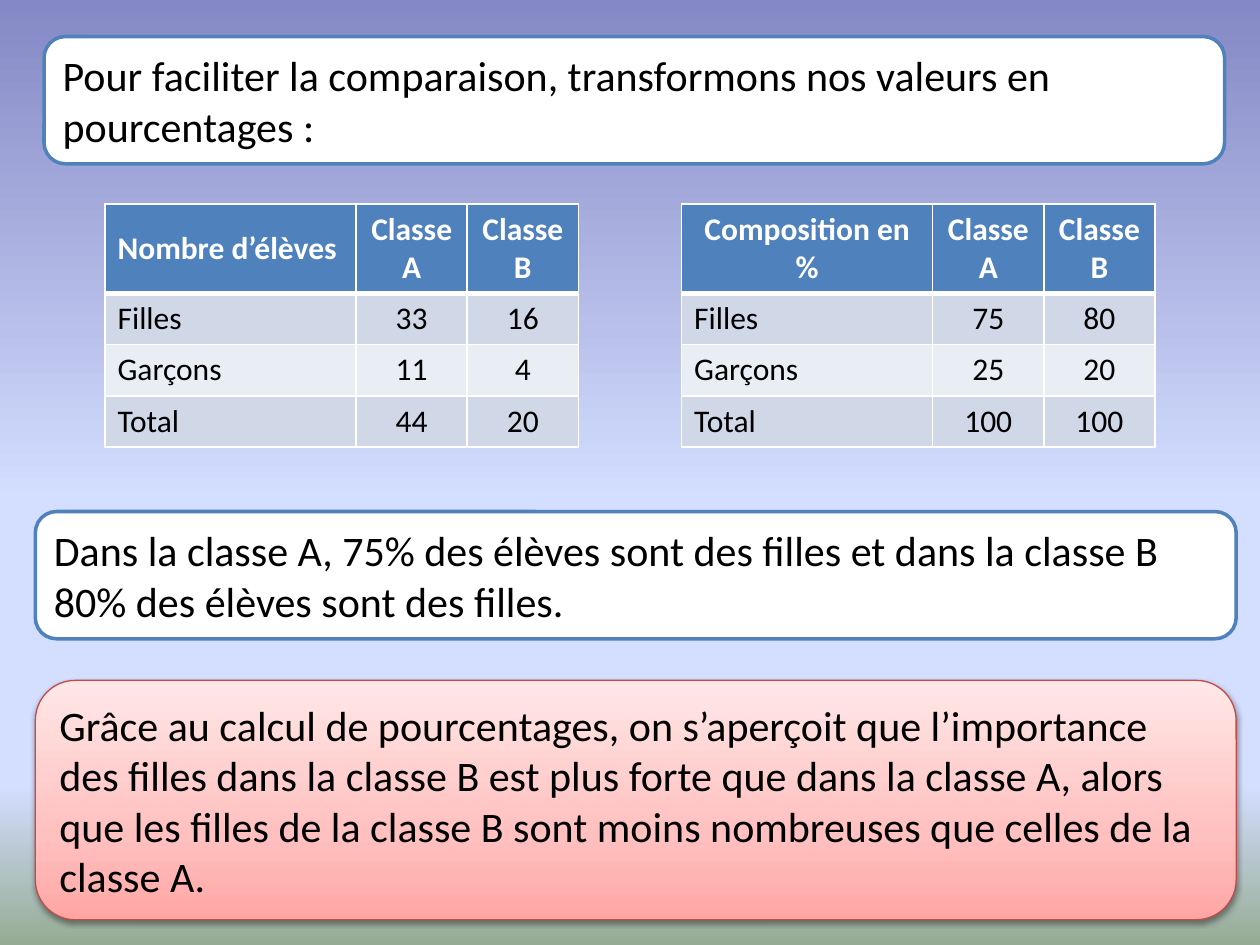
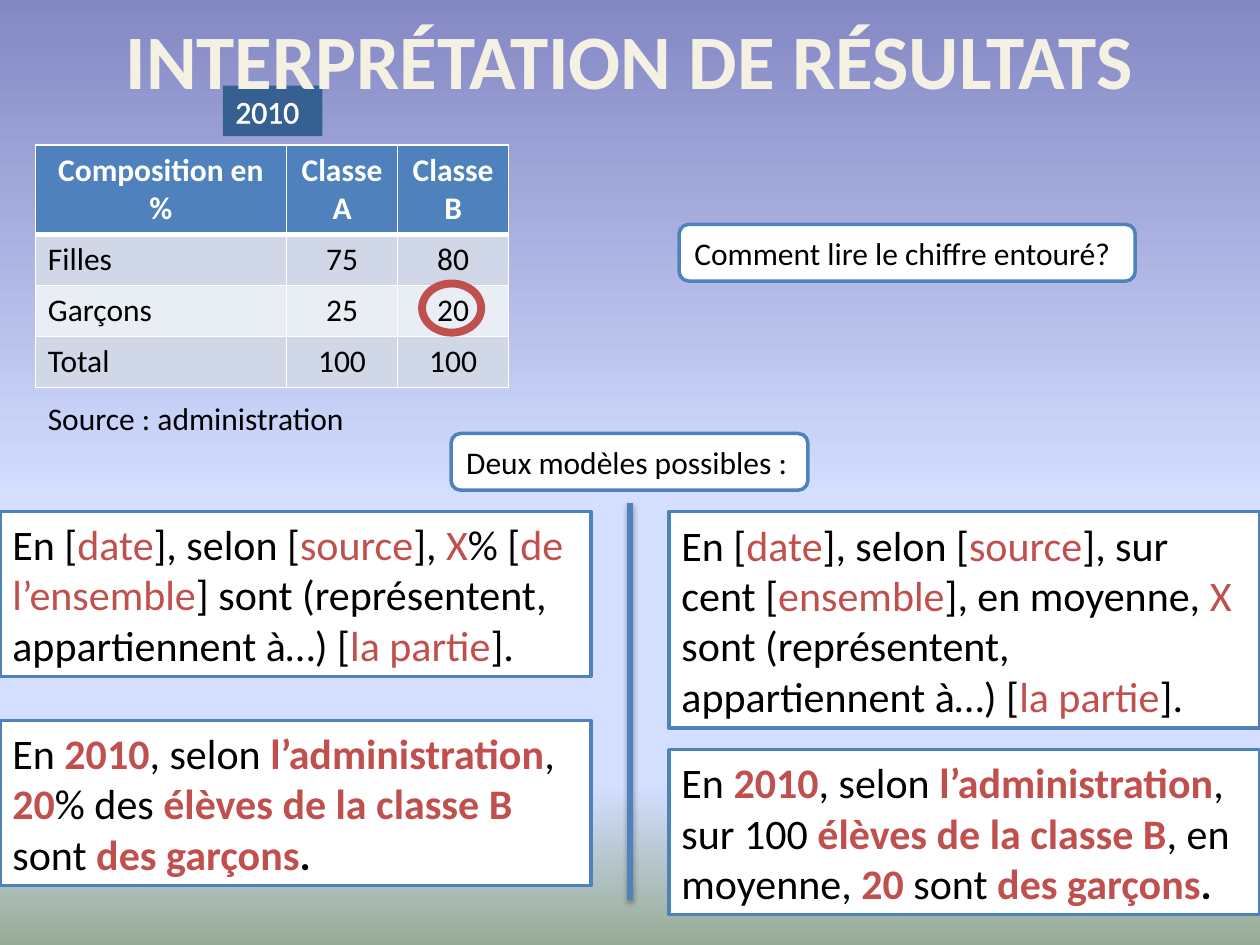
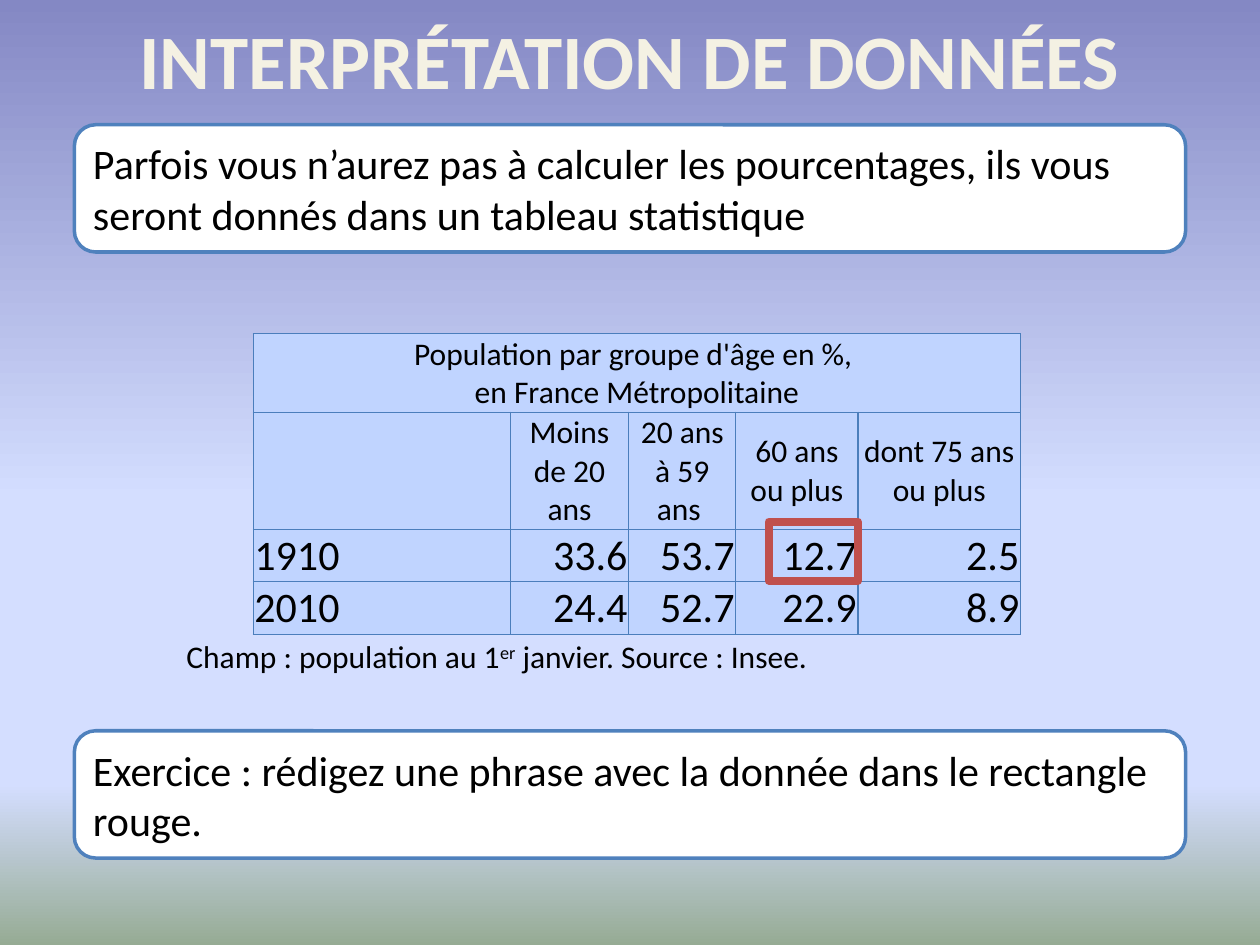
from dataclasses import dataclass

from lxml import etree
from pptx import Presentation
from pptx import util as u
from pptx.dml.color import RGBColor
from pptx.enum import shapes, text
from pptx.oxml.ns import qn


@dataclass(frozen=True)
class Theme:
    font: str = "Calibri"
    black: str = "000000"
    white: str = "FFFFFF"
    blue: str = "4F81BD"
    deep_blue: str = "376092"
    red: str = "C0504D"
    cream: str = "F4F1E3"
    title_edge: str = "054697"
    band_dark: str = "D0D8E8"
    band_light: str = "E9EDF4"
    age_fill: str = "C0D4FF"
    age_border: str = "4B7EBC"
    alert_edge: str = "BF4C48"
    sky: tuple = ((0, "8488C4"), (53, "D4DEFF"), (83, "D4DEFF"), (100, "96AB94"))
    alert: tuple = ((0, "FFA6A5"), (35, "FFC0BF"), (100, "FFE7E7"))
    title_size: int = 44
    body_size: int = 24
    small_size: int = 18


T = Theme()
ALIGN = {"l": text.PP_ALIGN.LEFT, "c": text.PP_ALIGN.CENTER, "r": text.PP_ALIGN.RIGHT}
ANCHOR = {"t": text.MSO_ANCHOR.TOP, "m": text.MSO_ANCHOR.MIDDLE, "b": text.MSO_ANCHOR.BOTTOM}

# ---- Content: *...* marks the accent colour, ^...^ a superscript ----
COUNTS = [("Nombre d’élèves", "Classe A", "Classe B"),
          ("Filles", "33", "16"), ("Garçons", "11", "4"), ("Total", "44", "20")]
PERCENTS = [("Composition en %", "Classe A", "Classe B"),
            ("Filles", "75", "80"), ("Garçons", "25", "20"), ("Total", "100", "100")]
AGE_HEADING = "Population par groupe d'âge en %, \nen France Métropolitaine"
AGES = [("", "Moins de 20 ans", "20 ans à 59 ans ", "60 ans ou plus", "dont 75 ans ou plus"),
        ("1910", "33.6", "53.7", "12.7", "2.5"),
        ("2010", "24.4", "52.7", "22.9", "8.9")]
COMPARISON = [
    ("Pour faciliter la comparaison, transformons nos valeurs en pourcentages :",
     (25.2, 20.9, 674.6, 72.7)),
    ("Dans la classe A, 75% des élèves sont des filles et dans la classe B "
     "80% des élèves sont des filles.", (20.2, 292.3, 686.2, 72.7)),
]
CONCLUSION = ("Grâce au calcul de pourcentages, on s’aperçoit que l’importance des filles "
              "dans la classe B est plus forte que dans la classe A, alors que les filles "
              "de la classe B sont moins nombreuses que celles de la classe A.")
PROMPTS = [("Comment lire le chiffre entouré?", (388.1, 128.2, 260.6, 32.4)),
           ("Deux modèles possibles :", (257.8, 247.7, 203.8, 32.4))]
# Text, column, top, height, bold accents
MODELS = [
    ("En [*date*], selon [*source*], *X*% [*de l’ensemble*] sont (représentent, "
     "appartiennent à…) [*la partie*].", 0, 292.3, 94.3, False),
    ("En [*date*], selon [*source*], sur cent [*ensemble*], en moyenne, *X* sont "
     "(représentent, appartiennent à…) [*la partie*].", 1, 292.3, 123.8, False),
    ("En *2010*, selon *l’administration*, *20*% des *élèves de la classe B* sont "
     "*des garçons*.", 0, 411.8, 94.3, True),
    ("En *2010*, selon *l’administration*, sur 100* élèves de la classe B*, en moyenne,"
     "* 20* sont *des garçons*.", 1, 428.4, 94.3, True),
]
EXERCISE = [
    ("Parfois vous n’aurez pas à calculer les pourcentages, ils vous seront donnés "
     "dans un tableau statistique", 71.3),
    ("Exercice : rédigez une phrase avec la donnée dans le rectangle rouge.", 417.6),
]


# ---- Helpers ----
def points(values):
    return [u.Pt(value) for value in values]


def add_xml(parent, tag, **attributes):
    child = etree.SubElement(parent, qn(tag))
    for key, value in attributes.items():
        child.set(key, str(value))
    return child


def solid(parent, color):
    return add_xml(add_xml(parent, "a:solidFill"), "a:srgbClr", val=color)


def set_gradient(fill, owner, stops, angle):
    fill.gradient()
    gradient = next(owner.iter(qn("a:gradFill")))
    for child in list(gradient):
        gradient.remove(child)
    stop_list = add_xml(gradient, "a:gsLst")
    for position, color in stops:
        stop = add_xml(stop_list, "a:gs", pos=position * 1000)
        add_xml(stop, "a:srgbClr", val=color)
    add_xml(gradient, "a:lin", ang=angle * 60000, scaled=0)


def set_shadow(part, alpha, blur, distance):
    properties = part._element.spPr
    for old in properties.findall(qn("a:effectLst")):
        properties.remove(old)
    effects = add_xml(properties, "a:effectLst")
    shadow = add_xml(effects, "a:outerShdw", blurRad=u.Pt(blur), dist=u.Pt(distance),
                     dir=90 * 60000, rotWithShape=0)
    add_xml(add_xml(shadow, "a:srgbClr", val=T.black), "a:alpha", val=alpha * 1000)


def write(frame, content, size=T.body_size, color=T.black, bold=False, bold_accents=False,
          align="l", outline=None):
    for index, line in enumerate(content.split("\n")):
        paragraph = frame.paragraphs[0] if index == 0 else frame.add_paragraph()
        paragraph.alignment = ALIGN[align]
        segments = line.split("*")
        for number, segment in enumerate(segments):
            accent = number % 2 == 1
            strong = bold_accents and (accent or number == len(segments) - 1)
            for level, piece in enumerate(segment.split("^")):
                if not piece:
                    continue
                run = paragraph.add_run()
                run.text = piece
                run.font.name, run.font.size = T.font, u.Pt(size)
                run.font.bold = bold or strong
                run.font.color.rgb = RGBColor.from_string(T.red if accent else color)
                properties = run._r.get_or_add_rPr()
                if level % 2:
                    properties.set("baseline", "30000")
                if outline:
                    edge = add_xml(properties, "a:ln", w=u.Pt(outline[1]))
                    solid(edge, outline[0])
                    properties.insert(0, edge)


def add_box(slide, place, content="", kind="ROUNDED_RECTANGLE", fill=T.white, line=T.blue,
            width=2, **style):
    box = slide.shapes.add_shape(shapes.MSO_SHAPE[kind], *points(place))
    box.shadow.inherit = False
    if fill:
        box.fill.solid()
        box.fill.fore_color.rgb = RGBColor.from_string(fill)
    else:
        box.fill.background()
    if line:
        box.line.color.rgb = RGBColor.from_string(line)
        box.line.width = u.Pt(width)
    else:
        box.line.fill.background()
    box.text_frame.word_wrap = True
    box.text_frame.vertical_anchor = ANCHOR["m"]
    write(box.text_frame, content, **style)
    return box


def add_label(slide, place, content, anchor="t", **style):
    frame = slide.shapes.add_textbox(*points(place)).text_frame
    frame.word_wrap = True
    frame.vertical_anchor = ANCHOR[anchor]
    write(frame, content, **style)


def add_title(slide, content):
    add_label(slide, (36, 0, 648, 67.7), content, anchor="m", size=T.title_size,
              color=T.cream, bold=True, align="c", outline=(T.title_edge, 1))


def style_cell(cell, content, fill, border, widths, anchor="t", **style):
    cell.fill.solid()
    cell.fill.fore_color.rgb = RGBColor.from_string(fill)
    cell.vertical_anchor = ANCHOR[anchor]
    write(cell.text_frame, content, **style)
    properties = cell._tc.get_or_add_tcPr()
    for index, (side, width) in enumerate(zip("LRTB", widths)):
        edge = add_xml(properties, f"a:ln{side}", w=u.Pt(width))
        solid(edge, border)
        properties.insert(index, edge)


def add_grid(slide, left, top, columns, rows):
    place = points((left, top, sum(columns), sum(rows)))
    grid = slide.shapes.add_table(len(rows), len(columns), *place).table
    grid.first_row = grid.horz_banding = False
    for column, width in zip(grid.columns, columns):
        column.width = u.Pt(width)
    for row, height in zip(grid.rows, rows):
        row.height = u.Pt(height)
    return grid


def add_class_table(slide, left, top, rows):
    grid = add_grid(slide, left, top, (143.5, 63.5, 63.5), (50, 29.2, 29.2, 29.2))
    for r, row in enumerate(rows):
        head = r == 0
        fill = T.blue if head else (T.band_light, T.band_dark)[r % 2]
        widths = (1, 1, 3 if r == 1 else 1, 3 if head else 1)
        for c, value in enumerate(row):
            centred = c > 0 or value == PERCENTS[0][0]
            style_cell(grid.cell(r, c), value, fill, T.white, widths,
                       anchor="m" if head else "t", size=T.small_size, bold=head,
                       color=T.white if head else T.black, align="c" if centred else "l")


def add_age_table(slide, left, top):
    grid = add_grid(slide, left, top, (146.9, 67.7, 61.2, 69.8, 92.9),
                    (44.6, 66.9, 29.9, 29.9))
    grid.cell(0, 0).merge(grid.cell(0, 4))
    for r, row in enumerate([(AGE_HEADING, "", "", "", ""), *AGES]):
        for c, value in enumerate(row):
            cell = grid.cell(r, c)
            cell.margin_left = cell.margin_right = cell.margin_top = u.Pt(0.72)
            cell.margin_bottom = 0
            align = "c" if r < 2 else "r" if c else "l"
            style_cell(cell, value, T.age_fill, T.age_border, (0.75,) * 4,
                       anchor="m" if r == 1 else "b", align=align,
                       size=T.small_size if r < 2 else T.body_size)


# ---- Slides ----
def build_comparison(slide):
    for left, rows in ((60, COUNTS), (389.5, PERCENTS)):
        add_class_table(slide, left, 116.6, rows)
    for content, place in COMPARISON:
        add_box(slide, place, content)
    conclusion = add_box(slide, (20.2, 388.8, 686.2, 136.8), CONCLUSION,
                         line=T.alert_edge, width=0.75)
    set_gradient(conclusion.fill, conclusion._element.spPr, T.alert, 270)
    set_shadow(conclusion, 38, 3.1, 1.6)


def build_results(slide):
    add_class_table(slide, 20.2, 82.8, PERCENTS)
    for content, place in PROMPTS:
        add_box(slide, place, content, size=T.small_size)
    # Ring around the figure to read
    add_box(slide, (241.2, 162, 33.8, 28.1), kind="OVAL", fill=None, line=T.red, width=4.5)
    # Divider between the two models
    divider = slide.shapes.add_connector(shapes.MSO_CONNECTOR.STRAIGHT,
                                         *points((360, 287.3, 360, 514.1)))
    divider.line.color.rgb = RGBColor.from_string(T.blue)
    divider.line.width = u.Pt(3)
    set_shadow(divider, 35, 3.1, 1.8)
    for content, column, top, height, strong in MODELS:
        add_box(slide, (column * 382.3, top, 337.7, height), content, kind="RECTANGLE",
                bold_accents=strong)
    add_box(slide, (127.4, 49, 56.9, 28.8), "2010", kind="RECTANGLE", fill=T.deep_blue,
            line=None, size=T.small_size, color=T.white, outline=(T.white, 1.45))
    add_label(slide, (20.2, 224.6, 215.3, 28.8), "Source : administration",
              size=T.small_size)
    add_title(slide, "INTERPRÉTATION DE RÉSULTATS")


def build_exercise(slide):
    add_age_table(slide, 144.7, 190.8)
    add_title(slide, "INTERPRÉTATION DE DONNÉES")
    for content, top in EXERCISE:
        add_box(slide, (42.5, top, 635, 72.7), content)
    add_label(slide, (99.4, 360.7, 385.2, 28.8),
              "Champ : population au 1^er^ janvier. Source : Insee.", size=T.small_size)
    # Frame around the figure of the exercise
    add_box(slide, (439.2, 298.1, 51.1, 33.8), kind="RECTANGLE", fill=None, line=T.red,
            width=4.5)


def main():
    deck = Presentation()
    deck.slide_width, deck.slide_height = points((720, 540))
    master = deck.slide_master
    set_gradient(master.background.fill, master._element, T.sky, 90)
    for build in (build_comparison, build_results, build_exercise):
        build(deck.slides.add_slide(deck.slide_layouts[6]))
    deck.save("out.pptx")


if __name__ == "__main__":
    main()
